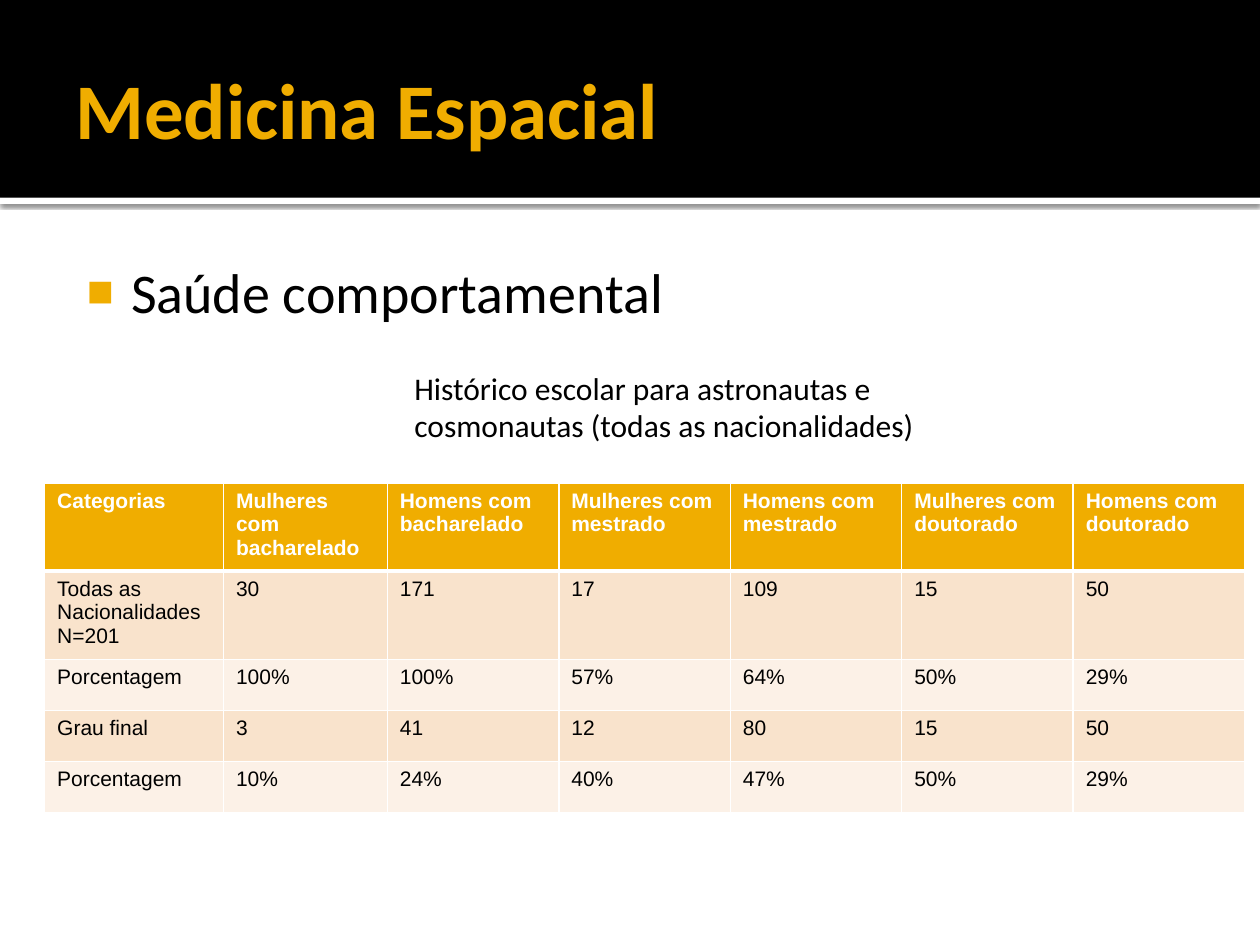
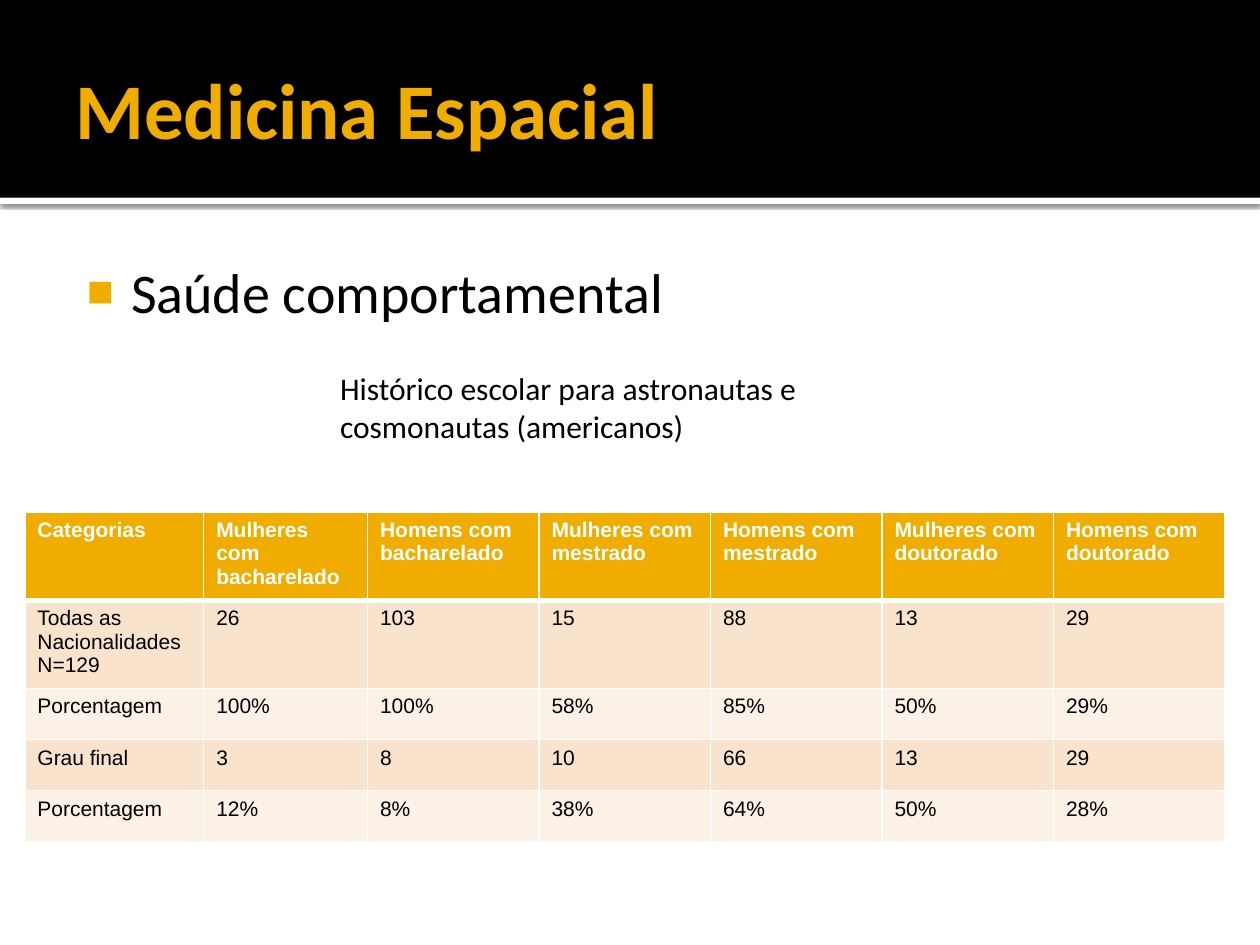
from dataclasses import dataclass
from typing import Any, NamedTuple

from lxml.etree import SubElement
from pptx import Presentation
from pptx.dml.color import RGBColor
from pptx.enum.shapes import MSO_SHAPE as Preset
from pptx.enum.text import MSO_ANCHOR as Anchor
from pptx.oxml.ns import qn
from pptx.util import Pt


@dataclass(frozen=True)
class Theme:
    amber: str = "F0AD00"
    black: str = "000000"
    white: str = "FFFFFF"
    peach: str = "F9E3CC"
    cream: str = "FCF1E7"
    heading_font: str = "Calibri"
    table_font: str = "Arial"
    title_size: float = 45
    topic_size: float = 32
    caption_size: float = 18
    table_size: float = 12


class Box(NamedTuple):
    left: float
    top: float
    width: float
    height: float

    def points(self) -> list[Pt]:
        return [Pt(length) for length in self]


class TextStyle(NamedTuple):
    font: str
    size: float
    color: str
    bold: bool = False


@dataclass(frozen=True)
class SchoolingSlide:
    caption: str
    caption_box: Box
    caption_inset: float
    table_left: float
    table_top: float
    header_height: float
    rows: list[list[str]]


THEME = Theme()
TITLE = TextStyle(THEME.heading_font, THEME.title_size, THEME.amber, True)
TOPIC = TextStyle(THEME.heading_font, THEME.topic_size, THEME.black)
CAPTION = TextStyle(THEME.heading_font, THEME.caption_size, THEME.black)
HEADER = TextStyle(THEME.table_font, THEME.table_size, THEME.white, True)
BODY = TextStyle(THEME.table_font, THEME.table_size, THEME.black)

SLIDE_WIDTH, SLIDE_HEIGHT = 720, 540
BAND_HEIGHT = 113
COLUMN_WIDTHS = [102.2, 93.6] + [98] * 5
ROW_HEIGHT = 29.2
THIN_RULE, HEADER_RULE = 1, 3

HEADINGS = ["Categorias"] + [
    f"{group} com {degree}"
    for degree in ("bacharelado", "mestrado", "doutorado")
    for group in ("Mulheres", "Homens")
]

SLIDES = [
    SchoolingSlide(
        "Histórico escolar para astronautas e cosmonautas (todas as nacionalidades)",
        Box(229.7, 185, 326, 94.3), 25.6, 25.5, 275.9, 22.3,
        [
            ["Todas as Nacionalidades\nN=201", "30", "171", "17", "109", "15", "50"],
            ["Porcentagem", "100%", "100%", "57%", "64%", "50%", "29%"],
            ["Grau final", "3", "41", "12", "80", "15", "50"],
            ["Porcentagem", "10%", "24%", "40%", "47%", "50%", "29%"],
        ],
    ),
    SchoolingSlide(
        "Histórico escolar para astronautas e cosmonautas (americanos)",
        Box(187.2, 207.4, 326, 72.7), 3.6, 14.2, 292.6, ROW_HEIGHT,
        [
            ["Todas as Nacionalidades\nN=129", "26", "103", "15", "88", "13", "29"],
            ["Porcentagem", "100%", "100%", "58%", "85%", "50%", "29%"],
            ["Grau final", "3", "8", "10", "66", "13", "29"],
            ["Porcentagem", "12%", "8%", "38%", "64%", "50%", "28%"],
        ],
    ),
]


def apply_format(target: Any, values: dict[str, Any]) -> None:
    for attribute, value in values.items():
        setattr(target, attribute, value)


def write(frame: Any, text: str, style: TextStyle) -> None:
    frame.text = text
    for paragraph in frame.paragraphs:
        font = paragraph.runs[0].font
        apply_format(font, {"name": style.font, "size": Pt(style.size), "bold": style.bold})
        font.color.rgb = RGBColor.from_string(style.color)


def add_text(slide: Any, box: Box, text: str, style: TextStyle, **settings: Any) -> Any:
    frame = slide.shapes.add_textbox(*box.points()).text_frame
    apply_format(frame, {"word_wrap": True, **settings})
    write(frame, text, style)
    return frame


def add_bar(slide: Any, box: Box, color: str) -> Any:
    bar = slide.shapes.add_shape(Preset.RECTANGLE, *box.points())
    bar.shadow.inherit = False
    bar.fill.solid()
    bar.fill.fore_color.rgb = RGBColor.from_string(color)
    bar.line.fill.background()
    return bar


def add_node(parent: Any, tag: str, **attributes: Any) -> Any:
    return SubElement(parent, qn(tag), {key: str(value) for key, value in attributes.items()})


def cast_shadow(bar: Any) -> None:
    effects = bar._element.spPr.find(qn("a:effectLst"))
    shadow = add_node(effects, "a:outerShdw", blurRad=Pt(2.5), dist=Pt(0.8),
                      dir=90 * 60000, algn="t", rotWithShape=0)
    tint = add_node(shadow, "a:srgbClr", val=THEME.black)
    add_node(tint, "a:alpha", val=60000)


def add_bullet(paragraph: Any) -> None:
    properties = paragraph._p.get_or_add_pPr()
    apply_indent = {"marL": Pt(34.6), "indent": Pt(-25.2)}
    for key, length in apply_indent.items():
        properties.set(key, str(length))
    add_node(add_node(properties, "a:buClr"), "a:srgbClr", val=THEME.amber)
    add_node(properties, "a:buSzPct", val=80000)
    add_node(properties, "a:buFont", typeface=THEME.table_font)
    add_node(properties, "a:buChar", char="■")


def rule_cell(cell: Any, top: float, bottom: float) -> None:
    properties = cell._tc.get_or_add_tcPr()
    widths = {"a:lnL": THIN_RULE, "a:lnR": THIN_RULE, "a:lnT": top, "a:lnB": bottom}
    for tag, width in widths.items():
        rule = add_node(properties, tag, w=Pt(width))
        add_node(add_node(rule, "a:solidFill"), "a:srgbClr", val=THEME.white)


def add_schooling_table(slide: Any, content: SchoolingSlide) -> None:
    rows = [HEADINGS, *content.rows]
    heights = [content.header_height] + [ROW_HEIGHT] * len(content.rows)
    box = Box(content.table_left, content.table_top, sum(COLUMN_WIDTHS), sum(heights))
    table = slide.shapes.add_table(len(rows), len(HEADINGS), *box.points()).table
    for column, width in zip(table.columns, COLUMN_WIDTHS):
        column.width = Pt(width)
    for index, (row, height, texts) in enumerate(zip(table.rows, heights, rows)):
        row.height = Pt(height)
        style = BODY if index else HEADER
        fill = (THEME.peach if index % 2 else THEME.cream) if index else THEME.amber
        top = HEADER_RULE if index == 1 else THIN_RULE
        bottom = THIN_RULE if index else HEADER_RULE
        for cell, text in zip(row.cells, texts):
            write(cell.text_frame, text, style)
            rule_cell(cell, top, bottom)
            cell.fill.solid()
            cell.fill.fore_color.rgb = RGBColor.from_string(fill)


def add_heading(slide: Any) -> None:
    cast_shadow(add_bar(slide, Box(0, BAND_HEIGHT, SLIDE_WIDTH, 3.6), THEME.white))
    add_bar(slide, Box(0, 0, SLIDE_WIDTH, BAND_HEIGHT), THEME.black)
    add_text(slide, Box(36, 12.2, 648, 98.6), "Medicina Espacial", TITLE,
             vertical_anchor=Anchor.MIDDLE, margin_right=Pt(3.6))
    topic = add_text(slide, Box(36, 139.7, 648, 364.3), "Saúde comportamental", TOPIC,
                     margin_left=Pt(4.3), margin_top=Pt(7.2))
    add_bullet(topic.paragraphs[0])


def main() -> None:
    deck = Presentation()
    apply_format(deck, {"slide_width": Pt(SLIDE_WIDTH), "slide_height": Pt(SLIDE_HEIGHT)})
    for content in SLIDES:
        slide = deck.slides.add_slide(deck.slide_layouts[6])
        add_heading(slide)
        add_schooling_table(slide, content)
        add_text(slide, content.caption_box, content.caption, CAPTION,
                 margin_top=Pt(content.caption_inset))
    deck.save("out.pptx")


if __name__ == "__main__":
    main()
